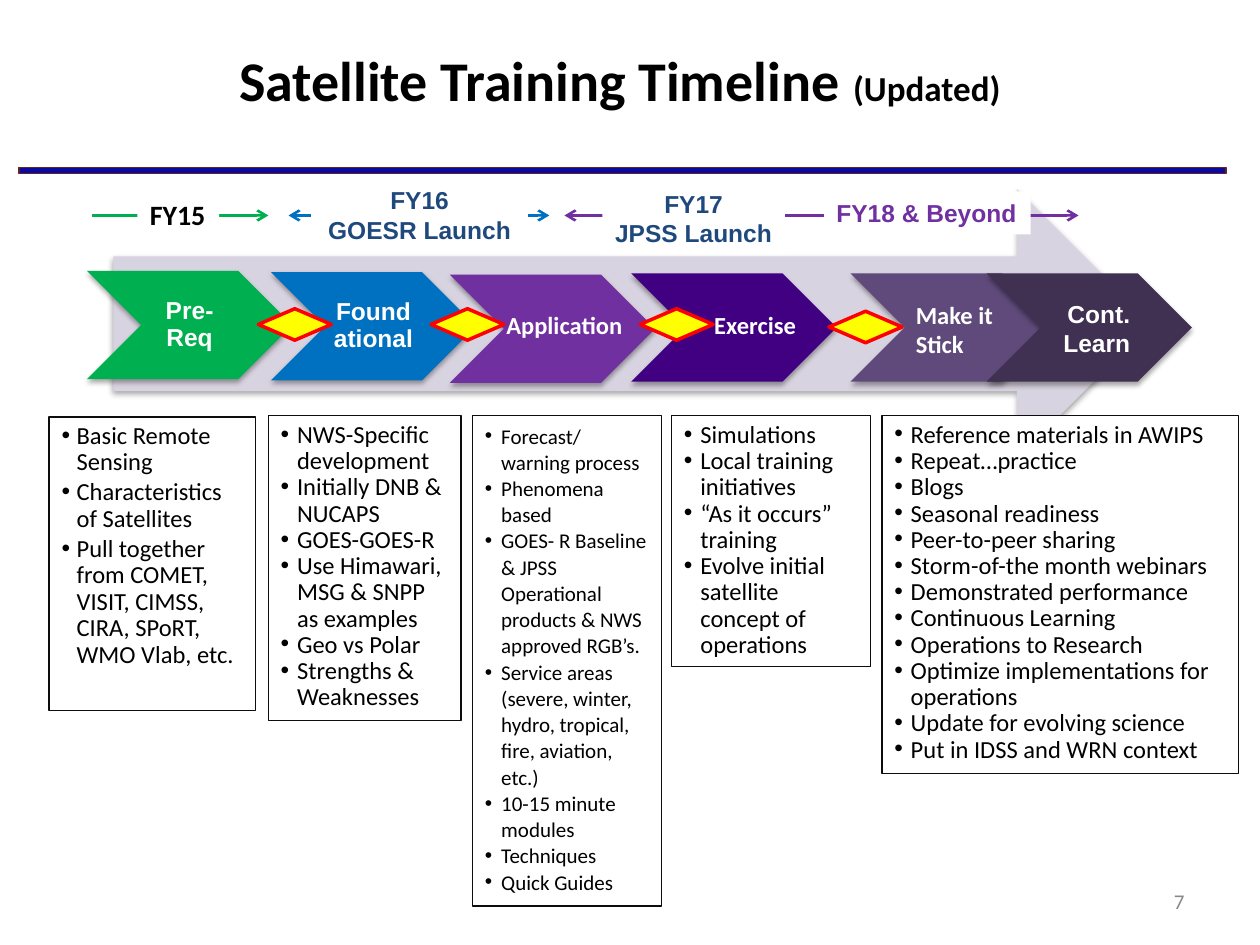
from lxml.etree import SubElement
from pptx import Presentation
from pptx.dml.color import RGBColor
from pptx.enum.shapes import MSO_CONNECTOR, MSO_SHAPE as Shape
from pptx.enum.text import MSO_ANCHOR as Anchor, PP_ALIGN as Align
from pptx.oxml.ns import qn
from pptx.util import Inches, Pt

COLORS = {
    "black": "000000", "white": "FFFFFF", "gray": "888888", "border": "0D0D0D",
    "rule": "0A0A9E", "rule edge": "632423", "big arrow": "D8D3E0",
    "green": "00B050", "blue": "0070C0", "purple": "7030A0", "indigo": "410082",
    "plum": "604A7B", "dark plum": "403152", "navy": "1F497D",
    "yellow": "FFFF00", "red": "FF0000",
}

TITLE = [("Satellite Training Timeline ", 32), ("(Updated)", 20)]

CHEVRONS = [  # left, top, color
    (0.69, 2.15, "green"), (2.15, 2.16, "blue"), (3.57, 2.18, "purple"),
    (5.01, 2.17, "indigo"), (6.75, 2.17, "plum"), (7.83, 2.17, "dark plum"),
]
CENTERED = dict(font="Arial", align=Align.CENTER, anchor=Anchor.MIDDLE,
                insets=(0.06,) * 4, line_spacing=0.9)
STAGE_LABELS = [  # lines, position, format
    (["Pre-Req"], (1.12, 2.15, 0.77, 0.86), CENTERED),
    (["Foundational"], (2.58, 2.16, 0.77, 0.86), CENTERED),
    (["Application"], (3.92, 2.41, 1.14, 0.34), dict(wrap=False)),
    (["Exercise"], (5.57, 2.41, 1.01, 0.34), {}),
    (["Make it", "Stick"], (7.17, 2.33, 0.94, 0.57), {}),
    (["Cont.", "Learn"], (8.26, 2.17, 0.77, 0.86),
     dict(font="Arial", align=Align.RIGHT, insets=(0.06, 0.2, 0.06, 0.06))),
]
MILESTONES = [(6.58, 2.47), (5.08, 2.45), (3.42, 2.45), (2.05, 2.45)]

YEAR_SPANS = [  # start, end, color, arrowheads
    (0.73, 2.13, "green", ["tailEnd"]),
    (4.48, 8.56, "purple", ["headEnd", "tailEnd"]),
    (2.29, 4.36, "blue", ["headEnd", "tailEnd"]),
]
YEAR_LABELS = [  # lines, position, format
    (["FY15"], (1.09, 1.52, 0.65, 0.37), dict(size=16, color="black", wrap=False)),
    (["FY17", "JPSS Launch"], (4.78, 1.45, 1.45, 0.57),
     dict(font="Arial", color="navy", align=Align.CENTER, wrap=False)),
    (["FY16", "GOESR Launch"], (2.47, 1.42, 1.72, 0.57),
     dict(font="Arial", color="navy", align=Align.CENTER)),
    (["FY18 & Beyond"], (6.54, 1.52, 1.64, 0.34),
     dict(font="Arial", color="purple", wrap=False)),
]

TIGHT = dict(indent=0.13, line_spacing=Pt(15))
TOPICS = [  # position, fill, format, items
    ((0.39, 3.31, 1.64, 2.33), None,
     dict(indent=0.12, line_spacing=0.9, space_after=2),
     ["Basic Remote Sensing", "Characteristics of Satellites",
      "Pull together from COMET, VISIT, CIMSS, CIRA, SPoRT, WMO Vlab, etc."]),
    ((2.13, 3.3, 1.53, 2.42), None, TIGHT,
     ["NWS-Specific development", "Initially DNB & NUCAPS", "GOES-GOES-R",
      "Use Himawari, MSG & SNPP as examples", "Geo vs Polar",
      "Strengths & Weaknesses"]),
    ((3.75, 3.3, 1.5, 3.89), None, dict(TIGHT, size=12),
     ["Forecast/ warning process", "Phenomena based",
      "GOES- R Baseline & JPSS Operational products & NWS approved RGB’s.",
      "Service areas (severe, winter, hydro, tropical, fire, aviation, etc.)",
      "10-15 minute modules", "Techniques", "Quick Guides"]),
    ((5.33, 3.3, 1.58, 1.99), None, TIGHT,
     ["Simulations", "Local training initiatives", "“As it occurs” training",
      "Evolve initial satellite concept of operations"]),
    ((7, 3.3, 2.83, 2.84), "white", TIGHT,
     ["Reference materials in AWIPS", "Repeat…practice", "Blogs",
      "Seasonal readiness", "Peer-to-peer sharing", "Storm-of-the month webinars",
      "Demonstrated performance", "Continuous Learning", "Operations to Research",
      "Optimize implementations for operations", "Update for evolving science",
      "Put in IDSS and WRN context"]),
]


def rgb(name):
    return RGBColor.from_string(COLORS[name])


def set_font(font, name, size, color, bold):
    font.name, font.size, font.bold = name, Pt(size), bold
    font.color.rgb = rgb(color)


def set_insets(frame, insets):
    (frame.margin_left, frame.margin_top,
     frame.margin_right, frame.margin_bottom) = map(Inches, insets)


def add_shadow(shape):
    effects = shape._element.spPr.find(qn("a:effectLst"))
    shadow = SubElement(effects, qn("a:outerShdw"), blurRad=str(Pt(3.1)),
                        dist=str(Pt(1.8)), dir="5400000", rotWithShape="0")
    color = SubElement(shadow, qn("a:srgbClr"), val=COLORS["black"])
    SubElement(color, qn("a:alpha"), val="35000")


def add_block(slide, kind, position, fill=None, line=None, width=0.75, shadow=False):
    shape = slide.shapes.add_shape(kind, *map(Inches, position))
    shape.shadow.inherit = False
    if fill:
        shape.fill.solid()
        shape.fill.fore_color.rgb = rgb(fill)
    else:
        shape.fill.background()
    if line:
        shape.line.color.rgb = rgb(line)
        shape.line.width = Pt(width)
    else:
        shape.line.fill.background()
    if shadow:
        add_shadow(shape)
    return shape


def write(shape, lines, font="Calibri", size=14, color="black", bold=False,
          align=Align.LEFT, anchor=Anchor.TOP, insets=(0.1, 0.05, 0.1, 0.05),
          wrap=True, line_spacing=1.0, space_after=0, indent=0):
    """Fill a shape with one paragraph per line, bulleted when indent is set."""
    frame = shape.text_frame
    frame.word_wrap, frame.vertical_anchor = wrap, anchor
    set_insets(frame, insets)
    for number, text in enumerate(lines):
        para = frame.paragraphs[0] if number == 0 else frame.add_paragraph()
        para.alignment, para.line_spacing = align, line_spacing
        para.space_after = Pt(space_after)
        if indent:
            props = para._p.get_or_add_pPr()
            props.set("marL", str(Inches(indent)))
            props.set("indent", str(-Inches(indent)))
            SubElement(props, qn("a:buFont"), typeface="Arial")
            SubElement(props, qn("a:buChar"), char="•")
        span = para.add_run()
        span.text = text
        set_font(span.font, font, size, color, bold)


def add_text(slide, lines, position, **style):
    write(slide.shapes.add_textbox(*map(Inches, position)), lines, **style)


def add_year_span(slide, start, end, color, heads, height=1.71):
    line = slide.shapes.add_connector(
        MSO_CONNECTOR.STRAIGHT, *map(Inches, (start, height, end, height)))
    line.line.color.rgb = rgb(color)
    line.line.width = Pt(1.5)
    for head in heads:
        SubElement(line.line._get_or_add_ln(), qn(f"a:{head}"), type="arrow")
    SubElement(line._element.spPr, qn("a:effectLst"))


def add_title(slide):
    title = slide.shapes.title
    title.left, title.top, title.width, title.height = map(Inches, (0.67, 0, 8.5, 1.25))
    frame = title.text_frame
    frame.vertical_anchor = Anchor.MIDDLE
    set_insets(frame, (0.1,) * 4)
    para = frame.paragraphs[0]
    para.alignment = Align.CENTER
    for text, size in TITLE:
        span = para.add_run()
        span.text = text
        set_font(span.font, "Calibri", size, "black", True)


def main():
    deck = Presentation()
    deck.slide_width, deck.slide_height = Inches(10), Inches(7.5)
    slide = deck.slides.add_slide(deck.slide_layouts[5])
    add_title(slide)
    add_block(slide, Shape.RECTANGLE, (0.15, 1.33, 9.58, 0.05), "rule", "rule edge")
    add_text(slide, ["7"], (7.17, 6.95, 2.33, 0.4), size=12, color="gray",
             align=Align.RIGHT, anchor=Anchor.MIDDLE)

    add_block(slide, Shape.RIGHT_ARROW, (0.9, 1.5, 8.24, 2.14), "big arrow", shadow=True)
    for left, top, color in CHEVRONS:
        add_block(slide, Shape.CHEVRON, (left, top, 1.63, 0.86), color, shadow=True)
    for left, top in MILESTONES:
        add_block(slide, Shape.FLOWCHART_DECISION, (left, top, 0.58, 0.25),
                  "yellow", "red", 2)
    for lines, position, style in STAGE_LABELS:
        add_text(slide, lines, position, color="white", bold=True, **style)

    for year_span in YEAR_SPANS:
        add_year_span(slide, *year_span)
    for lines, position, style in YEAR_LABELS:
        box = add_block(slide, Shape.RECTANGLE, position, "white")
        write(box, lines, bold=True, **style)
    for position, fill, style, items in TOPICS:
        box = add_block(slide, Shape.RECTANGLE, position, fill, "border")
        write(box, items, **style)
    deck.save("out.pptx")


if __name__ == "__main__":
    main()
